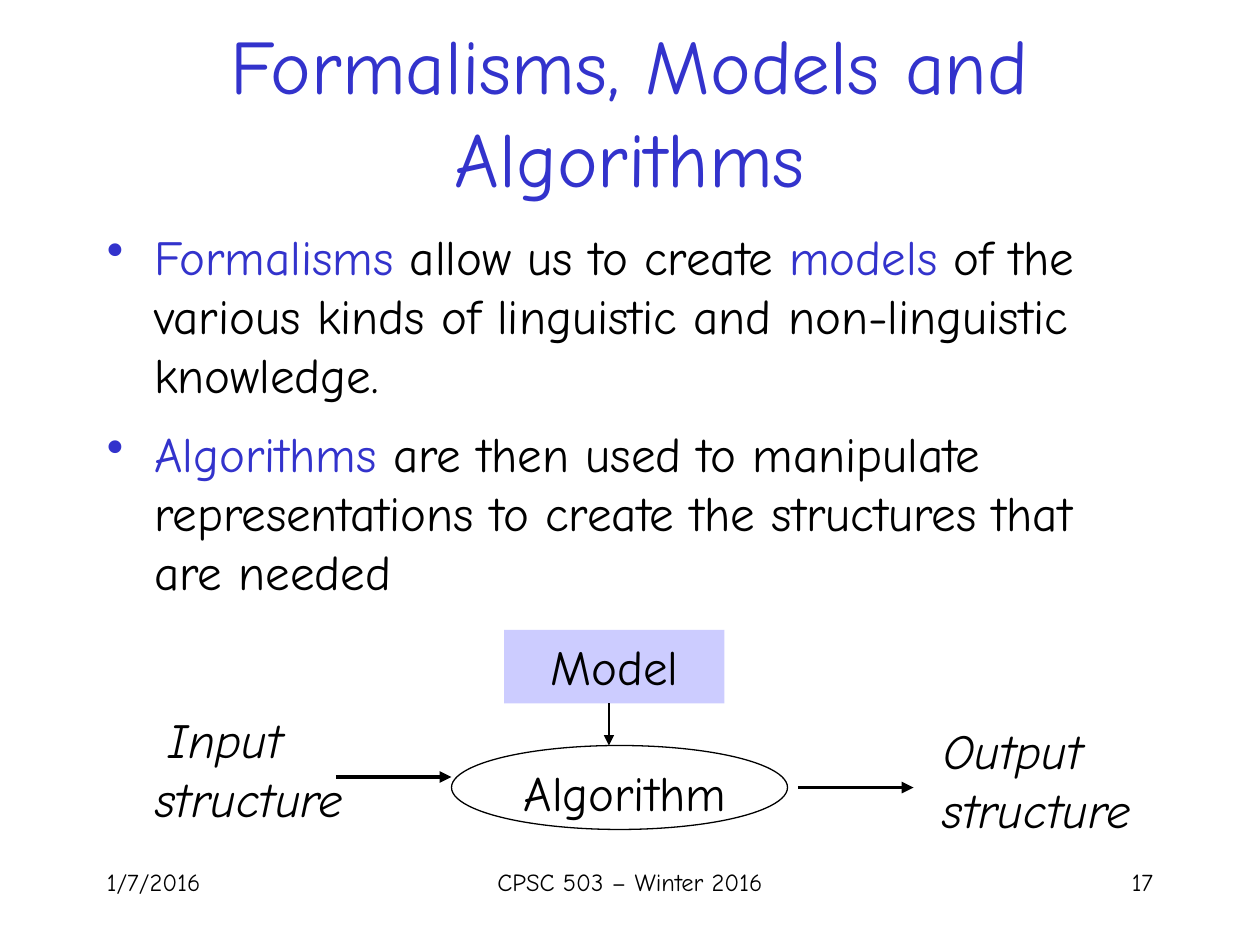
from dataclasses import dataclass

from lxml import etree
from pptx import Presentation
from pptx.dml.color import RGBColor
from pptx.enum.shapes import MSO_CONNECTOR, MSO_SHAPE
from pptx.enum.text import MSO_ANCHOR, PP_ALIGN
from pptx.oxml.ns import qn
from pptx.util import Pt

LEFT, CENTER, RIGHT = PP_ALIGN.LEFT, PP_ALIGN.CENTER, PP_ALIGN.RIGHT
TOP, MIDDLE = MSO_ANCHOR.TOP, MSO_ANCHOR.MIDDLE
RECTANGLE, OVAL = MSO_SHAPE.RECTANGLE, MSO_SHAPE.OVAL
STRAIGHT = MSO_CONNECTOR.STRAIGHT
PX = 9525  # EMU in one px, 96 px to the inch


@dataclass(frozen=True)
class Theme:
    font: str = "Comic Neue"
    text: RGBColor = RGBColor(0x00, 0x00, 0x00)
    accent: RGBColor = RGBColor(0x33, 0x33, 0xCC)
    box: RGBColor = RGBColor(0xCC, 0xCC, 0xFF)
    title_size: int = 44
    body_size: int = 28
    footer_size: int = 14
    space_before: float = 5.6
    space_after: int = 6
    hanging: int = 36
    thin: float = 0.75
    thick: float = 2.25


THEME = Theme()

# Boxes are (left, top, width, height) in px.
TITLE = ("Formalisms, Models and Algorithms", (72, 24, 816, 120))

# Each bullet is a list of (text, is a key term).
BULLETS = [
    [("Formalisms ", True), ("allow us to create ", False), ("models", True),
     (" of the various kinds of linguistic and non-linguistic knowledge.", False)],
    [("Algorithms", True),
     (" are then used to manipulate representations to create the structures"
      " that are needed", False)],
]
BULLETS_BOX = (72, 168, 784, 296)

FOOTER = [
    ("1/7/2016", (72, 656, 200, 48), LEFT),
    ("CPSC 503 – Winter 2016", (328, 656, 304, 48), CENTER),
    ("17", (688, 656, 200, 48), RIGHT),
]

MODEL_BOX = (384, 480, 168, 56)
ALGORITHM_OVAL = (344, 568, 256, 64)
LABELS = [  # text, box, italic
    ("Input structure", (56, 536, 232, 64), True),
    ("Model", MODEL_BOX, False),
    ("Algorithm", (360, 576, 232, 64), False),
    ("Output structure", (656, 544, 232, 64), True),
]
ARROWS = [  # start, end, line width
    ((464, 536), (464, 568), THEME.thin),
    ((256, 592), (344, 592), THEME.thick),
    ((608, 600), (696, 600), THEME.thick),
]


def emu(lengths):
    return [length * PX for length in lengths]


def add_text_box(slide, box, anchor=TOP):
    text_frame = slide.shapes.add_textbox(*emu(box)).text_frame
    text_frame.word_wrap = True
    text_frame.vertical_anchor = anchor
    return text_frame


def style_run(run, size, color=THEME.text, italic=False):
    run.font.name = THEME.font
    run.font.size = Pt(size)
    run.font.color.rgb = color
    run.font.italic = italic


def add_line_of_text(slide, text, box, size, align, color=THEME.text,
                     anchor=TOP, italic=False):
    text_frame = add_text_box(slide, box, anchor)
    text_frame.text = text
    paragraph = text_frame.paragraphs[0]
    paragraph.alignment = align
    style_run(paragraph.runs[0], size, color, italic)
    return paragraph


def hang(paragraph, bullet=None):
    """Give the paragraph a hanging indent, its spacing and maybe a bullet."""
    paragraph.space_before = Pt(THEME.space_before)
    properties = paragraph._p.get_or_add_pPr()
    properties.set("marL", str(THEME.hanging * PX))
    properties.set("indent", str(-THEME.hanging * PX))
    if bullet:
        paragraph.space_after = Pt(THEME.space_after)
        etree.SubElement(properties, qn("a:buChar"), char=bullet)


def add_bullets(slide):
    text_frame = add_text_box(slide, BULLETS_BOX)
    for index, parts in enumerate(BULLETS):
        paragraph = text_frame.add_paragraph() if index else text_frame.paragraphs[0]
        hang(paragraph, "•")
        for text, is_term in parts:
            run = paragraph.add_run()
            run.text = text
            style_run(run, THEME.body_size, THEME.accent if is_term else THEME.text)


def add_plain_shape(slide, kind, box):
    shape = slide.shapes.add_shape(kind, *emu(box))
    shape.shadow.inherit = False
    return shape


def add_arrow(slide, start, end, width):
    arrow = slide.shapes.add_connector(STRAIGHT, *emu(start + end))
    arrow.line.color.rgb = THEME.text
    arrow.line.width = Pt(width)
    etree.SubElement(arrow.line._get_or_add_ln(), qn("a:tailEnd"), type="triangle")
    etree.SubElement(arrow._element.spPr, qn("a:effectLst"))


def add_diagram(slide):
    model = add_plain_shape(slide, RECTANGLE, MODEL_BOX)
    model.fill.solid()
    model.fill.fore_color.rgb = THEME.box
    model.line.fill.background()

    algorithm = add_plain_shape(slide, OVAL, ALGORITHM_OVAL)
    algorithm.fill.background()
    algorithm.line.color.rgb = THEME.text
    algorithm.line.width = Pt(THEME.thin)

    for text, box, italic in LABELS:
        hang(add_line_of_text(slide, text, box, THEME.body_size, CENTER, italic=italic))
    for start, end, width in ARROWS:
        add_arrow(slide, start, end, width)


def main():
    presentation = Presentation()
    presentation.slide_width, presentation.slide_height = emu((960, 720))
    slide = presentation.slides.add_slide(presentation.slide_layouts[6])

    for text, box, align in FOOTER:
        add_line_of_text(slide, text, box, THEME.footer_size, align)
    add_line_of_text(slide, *TITLE, THEME.title_size, CENTER, THEME.accent, MIDDLE)
    add_bullets(slide)
    add_diagram(slide)
    presentation.save("out.pptx")


if __name__ == "__main__":
    main()
